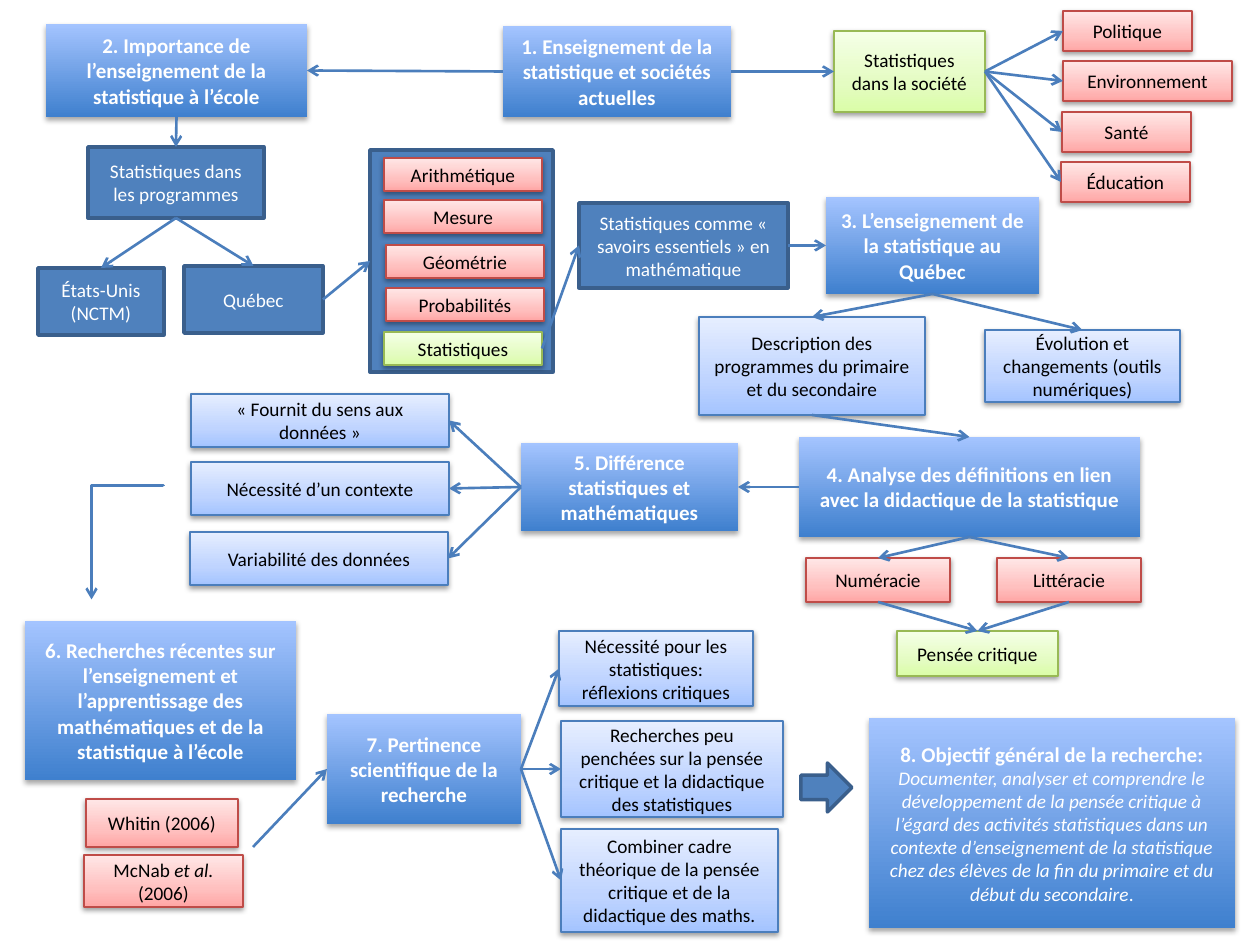
from dataclasses import dataclass
from enum import IntEnum
from typing import NamedTuple

from lxml.etree import SubElement
from pptx import Presentation
from pptx.dml.color import RGBColor as RGB
from pptx.enum.shapes import MSO_CONNECTOR as CONN, MSO_SHAPE as SHAPE
from pptx.enum.text import MSO_ANCHOR as ANCHOR, PP_ALIGN as ALIGN
from pptx.oxml.ns import qn
from pptx.util import Emu, Pt

PX_PER_INCH = 126


class Stop(NamedTuple):
    percent: int
    color: str


class Shadow(NamedTuple):
    alpha: int
    distance: float


@dataclass(frozen=True)
class Style:
    stops: tuple[Stop, ...]
    text: str
    line: str | None = None
    line_pt: float = 0.75
    shadow: Shadow | None = None
    heading: bool = False


def pale(low: str, mid: str, high: str, line: str) -> Style:
    stops = Stop(0, low), Stop(35, mid), Stop(100, high)
    return Style(stops, "000000", line, shadow=Shadow(38, 1.6))


@dataclass(frozen=True)
class Theme:
    font: str = "Calibri"
    heading_pt: int = 12
    body_pt: int = 11
    link: str = "4B7EBC"
    link_pt: float = 1.5
    shadow: str = "000000"
    shadow_blur_pt: float = 3.1
    head: Style = Style((Stop(0, "3F80CE"), Stop(100, "A4C4FF")), "FFFFFF",
                        shadow=Shadow(35, 1.8), heading=True)
    solid: Style = Style((Stop(0, "4F81BD"),), "FFFFFF", "3A5F8C", 2)
    green: Style = pale("DAFDA7", "E4FCC2", "F5FFE7", "98B955")
    red: Style = pale("FFA6A5", "FFC0BF", "FFE7E7", "BF4C48")
    blue: Style = pale("A4C4FF", "BFD4FF", "E6EEFF", "4B7EBC")


T = Theme()


class Side(IntEnum):
    TOP = 0
    LEFT = 1
    BOTTOM = 2
    RIGHT = 3


class Box(NamedTuple):
    key: str
    x: int
    y: int
    w: int
    h: int
    style: Style
    text: str = ""
    shape: SHAPE = SHAPE.RECTANGLE


class Fan(NamedTuple):
    source: str
    source_side: Side
    targets: tuple[str, ...]
    target_side: Side


BOXES = [
    Box("domaines", 370, 150, 183, 222, T.solid),
    Box("1", 503, 26, 228, 91, T.head, "1. Enseignement de la statistique et sociétés actuelles"),
    Box("2", 46, 24, 261, 93, T.head, "2. Importance de l’enseignement de la statistique à l’école"),
    Box("3", 826, 197, 213, 97, T.head, "3. L’enseignement de la statistique au Québec"),
    Box("4", 799, 437, 341, 100, T.head,
        "4. Analyse des définitions en lien avec la didactique de la statistique"),
    Box("5", 521, 443, 217, 88, T.head, "5. Différence statistiques et mathématiques"),
    Box("6", 25, 621, 271, 159, T.head,
        "6. Recherches récentes sur l’enseignement et l’apprentissage des mathématiques "
        "et de la statistique à l’école"),
    Box("7", 327, 714, 194, 110, T.head, "7. Pertinence scientifique de la recherche"),
    Box("8", 869, 718, 366, 210, T.head,
        "8. Objectif général de la recherche:\n"
        "_Documenter, analyser et comprendre le développement de la pensée critique à l’égard "
        "des activités statistiques dans un contexte d’enseignement de la statistique chez des "
        "élèves de la fin du primaire et du début du secondaire_."),
    Box("société", 834, 31, 151, 81, T.green, "Statistiques dans la société"),
    Box("politique", 1063, 11, 129, 40, T.red, "Politique"),
    Box("environnement", 1063, 61, 169, 40, T.red, "Environnement"),
    Box("santé", 1062, 112, 129, 40, T.red, "Santé"),
    Box("éducation", 1061, 162, 129, 40, T.red, "Éducation"),
    Box("programmes", 88, 147, 176, 71, T.solid, "Statistiques dans les programmes"),
    Box("états-unis", 38, 268, 126, 67, T.solid, "États-Unis (NCTM)"),
    Box("québec", 184, 266, 139, 67, T.solid, "Québec"),
    Box("évolution", 985, 330, 195, 72, T.blue, "Évolution et changements (outils numériques)"),
    Box("description", 699, 317, 226, 98, T.blue,
        "Description des programmes du primaire et du secondaire"),
    Box("savoirs", 579, 203, 209, 85, T.solid,
        "Statistiques comme « savoirs essentiels » en mathématique"),
    Box("arithmétique", 384, 158, 158, 33, T.red, "Arithmétique"),
    Box("mesure", 384, 200, 158, 33, T.red, "Mesure"),
    Box("géométrie", 386, 245, 158, 33, T.red, "Géométrie"),
    Box("probabilités", 386, 288, 158, 33, T.red, "Probabilités"),
    Box("statistiques", 384, 332, 158, 33, T.green, "Statistiques"),
    Box("numéracie", 806, 558, 144, 44, T.red, "Numéracie"),
    Box("littéracie", 997, 558, 144, 44, T.red, "Littéracie"),
    Box("pensée", 897, 631, 161, 45, T.green, "Pensée critique"),
    Box("sens", 191, 394, 258, 53, T.blue, "« Fournit du sens aux données »"),
    Box("contexte", 191, 462, 258, 53, T.blue, "Nécessité d’un contexte"),
    Box("variabilité", 190, 532, 258, 53, T.blue, "Variabilité des données"),
    Box("whitin", 86, 799, 152, 48, T.red, "Whitin (2006)"),
    Box("mcnab", 84, 855, 159, 52, T.red, "McNab _et al. _(2006)"),
    Box("nécessité", 559, 631, 194, 75, T.blue,
        "Nécessité pour les statistiques: réflexions critiques"),
    Box("recherches", 561, 721, 222, 96, T.blue,
        "Recherches peu penchées sur la pensée critique et la didactique des statistiques"),
    Box("cadre", 561, 829, 217, 103, T.blue,
        "Combiner cadre théorique de la pensée critique et de la didactique des maths."),
    Box("flèche", 801, 763, 51, 49, T.solid, shape=SHAPE.RIGHT_ARROW),
]

FANS = [
    Fan("1", Side.RIGHT, ("société",), Side.LEFT),
    Fan("1", Side.LEFT, ("2",), Side.RIGHT),
    Fan("société", Side.RIGHT, ("politique", "environnement", "santé", "éducation"), Side.LEFT),
    Fan("2", Side.BOTTOM, ("programmes",), Side.TOP),
    Fan("programmes", Side.BOTTOM, ("états-unis", "québec"), Side.TOP),
    Fan("québec", Side.RIGHT, ("domaines",), Side.LEFT),
    Fan("statistiques", Side.RIGHT, ("savoirs",), Side.LEFT),
    Fan("savoirs", Side.RIGHT, ("3",), Side.LEFT),
    Fan("3", Side.BOTTOM, ("description", "évolution"), Side.TOP),
    Fan("description", Side.BOTTOM, ("4",), Side.TOP),
    Fan("4", Side.BOTTOM, ("numéracie", "littéracie"), Side.TOP),
    Fan("numéracie", Side.BOTTOM, ("pensée",), Side.TOP),
    Fan("littéracie", Side.BOTTOM, ("pensée",), Side.TOP),
    Fan("4", Side.LEFT, ("5",), Side.RIGHT),
    Fan("5", Side.LEFT, ("sens", "contexte", "variabilité"), Side.RIGHT),
    Fan("7", Side.RIGHT, ("nécessité", "recherches", "cadre"), Side.LEFT),
]


def px(n: int) -> Emu:
    return Emu(round(n * 914400 / PX_PER_INCH))


def add_color(parent, color: str):
    return SubElement(parent, qn("a:srgbClr"), val=color)


def paint(sp, style: Style) -> None:
    if len(style.stops) == 1:
        sp.fill.solid()
        sp.fill.fore_color.rgb = RGB.from_string(style.stops[0].color)
    else:
        sp.fill.gradient()
        sp.fill.gradient_angle = 90
        stops = next(sp._element.spPr.iter(qn("a:gsLst")))
        for old in list(stops):
            stops.remove(old)
        for stop in style.stops:
            add_color(SubElement(stops, qn("a:gs"), pos=str(stop.percent * 1000)), stop.color)
    if style.line:
        sp.line.color.rgb = RGB.from_string(style.line)
        sp.line.width = Pt(style.line_pt)
    else:
        sp.line.fill.background()
    sp.shadow.inherit = False
    if style.shadow:
        effects = sp._element.spPr.find(qn("a:effectLst"))
        outer = SubElement(effects, qn("a:outerShdw"), blurRad=str(Pt(T.shadow_blur_pt)),
                           dist=str(Pt(style.shadow.distance)), dir="5400000", rotWithShape="0")
        SubElement(add_color(outer, T.shadow), qn("a:alpha"), val=str(style.shadow.alpha * 1000))


def write(tf, text: str, style: Style) -> None:
    tf.word_wrap = True
    tf.vertical_anchor = ANCHOR.MIDDLE
    for i, line in enumerate(text.split("\n")):
        p = tf.add_paragraph() if i else tf.paragraphs[0]
        heading = style.heading and i == 0
        p.alignment = ALIGN.CENTER
        p.font.name = T.font
        p.font.size = Pt(T.heading_pt if heading else T.body_pt)
        p.font.bold = heading
        p.font.color.rgb = RGB.from_string(style.text)
        for j, part in enumerate(line.split("_")):
            if part:
                r = p.add_run()
                r.text = part
                if j % 2:
                    r.font.italic = True


def add_box(s, box: Box):
    sp = s.shapes.add_shape(box.shape, px(box.x), px(box.y), px(box.w), px(box.h))
    paint(sp, box.style)
    if box.text:
        write(sp.text_frame, box.text, box.style)
    return sp


def add_arrow(s, x1: int = 0, y1: int = 0, x2: int = 0, y2: int = 0, kind: CONN = CONN.STRAIGHT):
    c = s.shapes.add_connector(kind, px(x1), px(y1), px(x2), px(y2))
    c.line.color.rgb = RGB.from_string(T.link)
    c.line.width = Pt(T.link_pt)
    spPr = c._element.spPr
    SubElement(spPr.find(qn("a:ln")), qn("a:tailEnd"), type="arrow")
    SubElement(spPr, qn("a:effectLst"))
    return c


def add_fan(s, fan: Fan, shapes: dict) -> None:
    for target in fan.targets:
        c = add_arrow(s)
        c.begin_connect(shapes[fan.source], fan.source_side)
        c.end_connect(shapes[target], fan.target_side)


def add_elbow(s, x: int, y: int, w: int, h: int) -> None:
    c = add_arrow(s, x, y, x + w, y + h, CONN.ELBOW)
    spPr = c._element.spPr
    spPr.find(qn("a:xfrm")).set("rot", "5400000")
    guides = next(spPr.iter(qn("a:avLst")))
    SubElement(guides, qn("a:gd"), name="adj1", fmla="val -1000")


def main() -> None:
    prs = Presentation()
    prs.slide_width, prs.slide_height = px(1260), px(945)
    s = prs.slides.add_slide(prs.slide_layouts[6])
    shapes = {box.key: add_box(s, box) for box in BOXES}
    for fan in FANS:
        add_fan(s, fan, shapes)
    add_arrow(s, 253, 847, 327, 769).end_connect(shapes["7"], Side.LEFT)
    add_elbow(s, 71, 507, 113, 72)
    prs.save("out.pptx")


if __name__ == "__main__":
    main()
